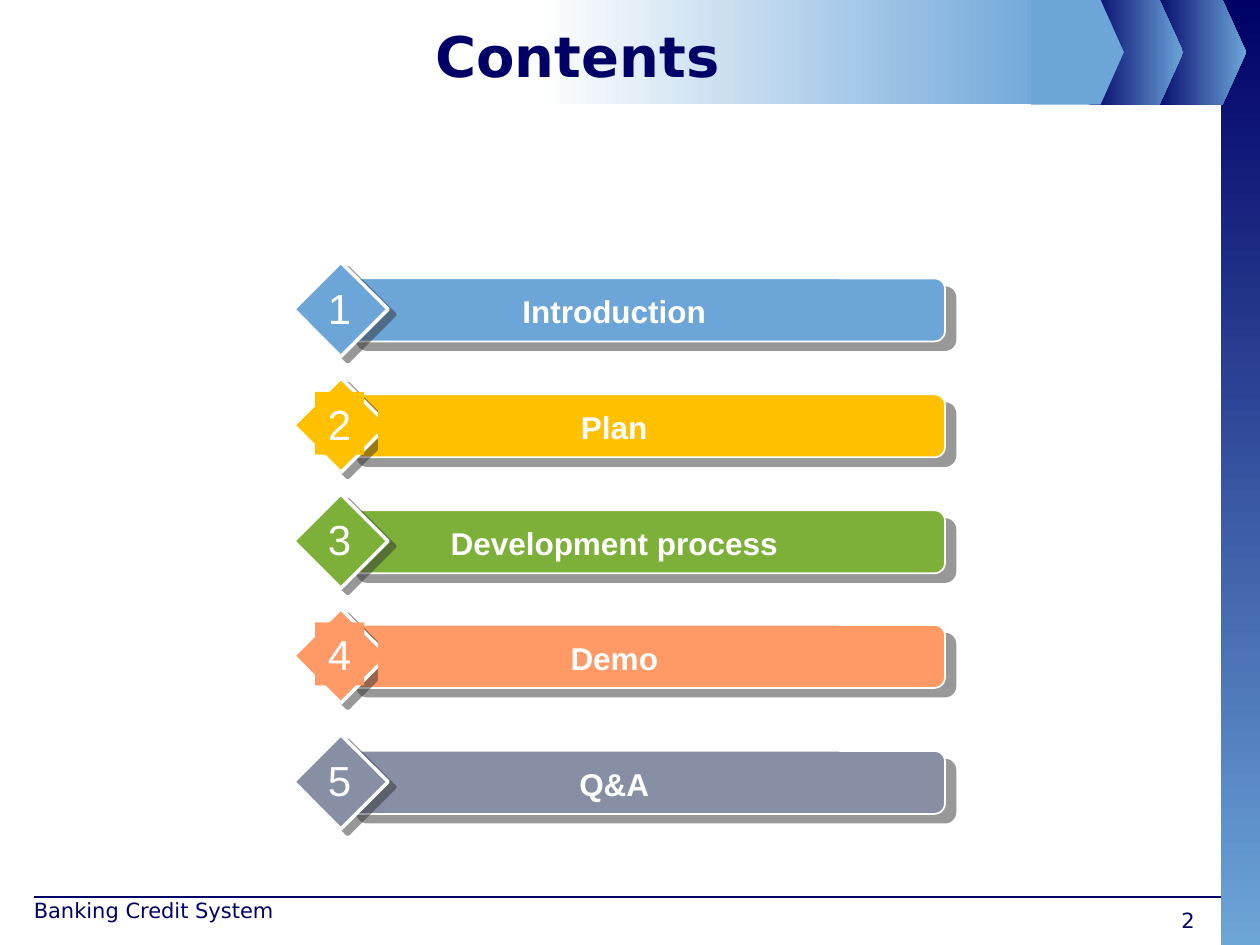
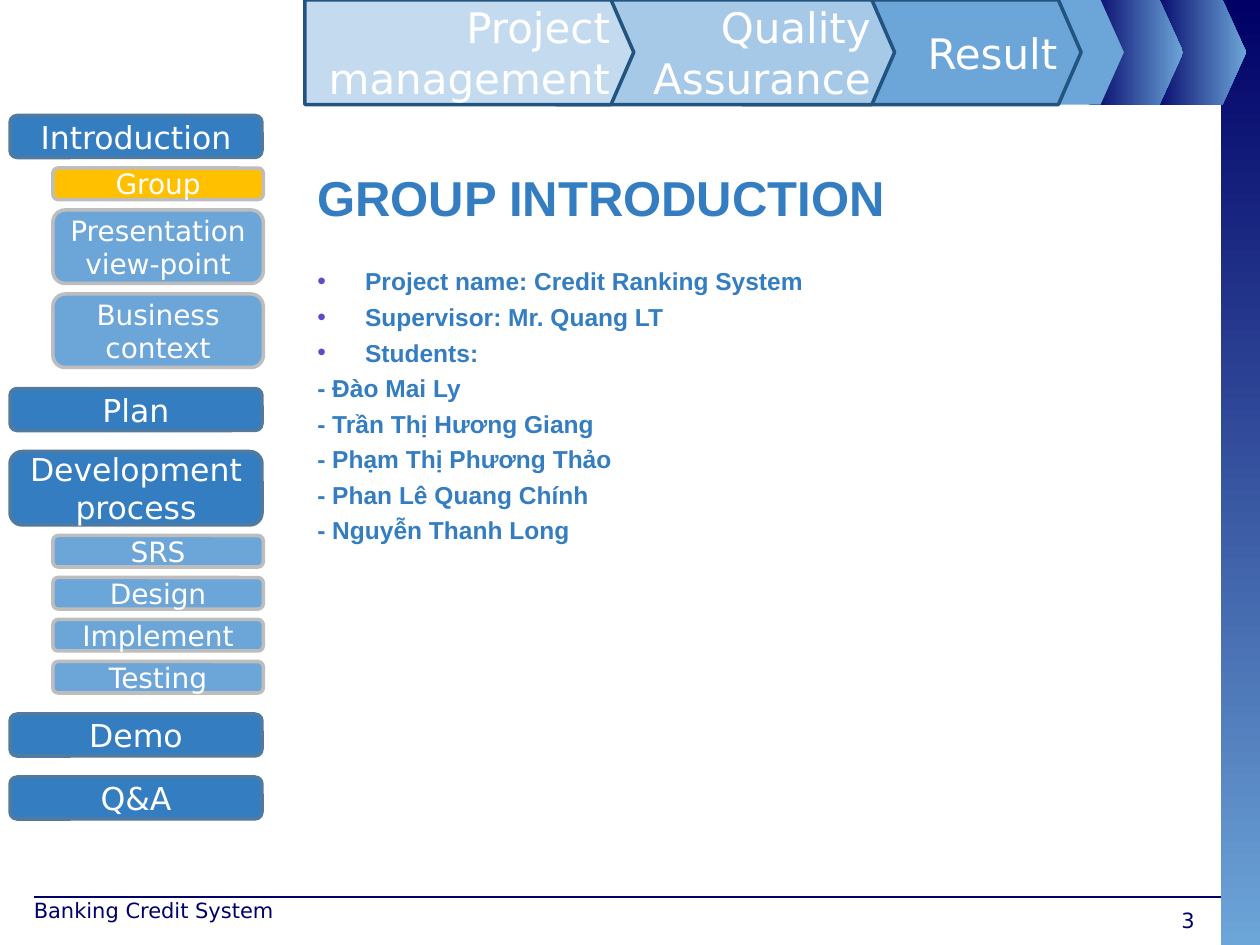
from lxml.etree import SubElement
from pptx import Presentation
from pptx.dml.color import RGBColor
from pptx.enum.shapes import MSO_CONNECTOR, MSO_SHAPE as Preset
from pptx.enum.text import MSO_ANCHOR as Anchor, PP_ALIGN as Align
from pptx.oxml.ns import qn
from pptx.util import Inches, Pt

COLORS = {
    "navy": "000066", "sky": "6CA5D8", "white": "FFFFFF", "gold": "FFC000",
    "green": "7DB038", "coral": "FF9966", "slate": "878FA5", "blue": "337DC0",
    "steel": "507AA0", "silver": "BDBDBD", "ink": "225480", "light": "A7C9E8",
    "pale": "C4DBEF", "violet": "5D4BC7", "shadow": "333333",
}
RGB = {name: RGBColor.from_string(value) for name, value in COLORS.items()}
SANS, ARIAL = "DejaVu Sans", "Arial"


def add_box(slide, preset, place, fill, line=None, line_width=1, adjustment=None,
            angle=0, shadow_distance=None, shadow_angle=0):
    shape = slide.shapes.add_shape(preset, *[Inches(value) for value in place])
    shape.shadow.inherit = False
    if adjustment is not None:
        shape.adjustments[0] = adjustment
    if isinstance(fill, tuple):
        shape.fill.gradient()
        shape.fill.gradient_angle = angle
        for stop, name in zip(shape.fill.gradient_stops, fill):
            stop.color.rgb = RGB[name]
    else:
        shape.fill.solid()
        shape.fill.fore_color.rgb = RGB[fill]
    if line:
        shape.line.color.rgb = RGB[line]
        shape.line.width = Pt(line_width)
    else:
        shape.line.fill.background()
    if shadow_distance:
        effects = shape._element.spPr.find(qn("a:effectLst"))
        outer = SubElement(effects, qn("a:outerShdw"), blurRad="0",
                           dist=str(Pt(shadow_distance)), dir=str(shadow_angle * 60000),
                           algn="ctr", rotWithShape="0")
        color = SubElement(outer, qn("a:srgbClr"), val=COLORS["shadow"])
        SubElement(color, qn("a:alpha"), val="50000")
    return shape


def write(target, text, place=None, size=18, font=SANS, color="white", bold=False,
          align=Align.CENTER, anchor=Anchor.MIDDLE, wrap=True, fill=None,
          before=0, bullet=None, hanging=0, add=False):
    if place:
        target = target.shapes.add_textbox(*[Inches(value) for value in place])
    frame = target.text_frame
    frame.word_wrap = wrap
    frame.vertical_anchor = anchor
    if fill:
        target.fill.solid()
        target.fill.fore_color.rgb = RGB[fill]
    paragraph = frame.add_paragraph() if add else frame.paragraphs[0]
    paragraph.alignment = align
    paragraph.space_before = Pt(before)
    properties = paragraph._p.get_or_add_pPr()
    if hanging:
        properties.set("marL", str(Inches(hanging)))
        properties.set("indent", str(-Inches(hanging)))
    if bullet:
        bullet_color = SubElement(properties, qn("a:buClr"))
        SubElement(bullet_color, qn("a:srgbClr"), val=COLORS["violet"])
        SubElement(properties, qn("a:buFont"), typeface=ARIAL)
        SubElement(properties, qn("a:buChar"), char=bullet)
    run = paragraph.add_run()
    run.text = text
    run.font.size = Pt(size)
    run.font.name = font
    run.font.bold = bold
    run.font.color.rgb = RGB[color]
    return target


presentation = Presentation()
presentation.slide_width = Inches(10)
presentation.slide_height = Inches(7.5)

for page_number in (2, 3):
    slide = presentation.slides.add_slide(presentation.slide_layouts[6])
    rule = slide.shapes.add_connector(MSO_CONNECTOR.STRAIGHT, Inches(0.27), Inches(7.12),
                                      Inches(9.69), Inches(7.12))
    rule.line.color.rgb = RGB["navy"]
    rule.line.width = Pt(0.75)
    SubElement(rule._element.spPr, qn("a:effectLst"))
    add_box(slide, Preset.RECTANGLE, (9.69, 0, 0.31, 7.5), ("navy", "sky"), angle=270)
    for left in (9.14, 8.64):
        add_box(slide, Preset.PENTAGON, (left, 0, 0.75, 0.83), ("navy", "sky"), adjustment=0.25)
    add_box(slide, Preset.RECTANGLE, (4.25, 0, 4.18, 0.83), ("white", "sky"))
    add_box(slide, Preset.PENTAGON, (8.18, 0, 0.74, 0.83), "sky", adjustment=0.25)
    write(slide, "Banking Credit System", (0.17, 7.07, 2.33, 0.35), size=12, color="navy",
          align=Align.LEFT, anchor=Anchor.TOP)
    write(slide, str(page_number), (7.25, 7.15, 2.33, 0.26), size=12, color="navy",
          align=Align.RIGHT, anchor=Anchor.TOP)

contents_slide, group_slide = presentation.slides

write(contents_slide, "Contents", (0.5, 0.13, 8.17, 0.62), size=32, color="navy", bold=True)
contents = [
    ("Introduction", "sky", 2.21, None),
    ("Plan", "gold", 3.13, "gold"),
    ("Development process", "green", 4.05, None),
    ("Demo", "coral", 4.96, "coral"),
    ("Q&A", "slate", 5.96, None),
]
for number, (label, color, top, label_fill) in enumerate(contents, 1):
    add_box(contents_slide, Preset.ROUNDED_RECTANGLE, (2.75, top, 4.75, 0.5), color, "white",
            shadow_distance=7.8, shadow_angle=40)
    add_box(contents_slide, Preset.DIAMOND, (2.33, top - 0.13, 0.75, 0.75), color, "white", 2,
            shadow_distance=5, shadow_angle=37)
    write(contents_slide, label, (3, top + 0.06, 3.75, 0.4), font=ARIAL, bold=True,
          anchor=Anchor.TOP, fill=label_fill)
    write(contents_slide, str(number), (2.5, top - 0.02, 0.39, 0.5), size=24, font=ARIAL,
          anchor=Anchor.TOP, wrap=False, fill=label_fill)

introduction = write(group_slide, "GROUP INTRODUCTION", (2.42, 1.28, 7.17, 0.83), size=28,
                     font=ARIAL, color="blue", bold=True, align=Align.LEFT, anchor=Anchor.TOP)
details = [
    ("Project name: Credit Ranking System", "•"),
    ("Supervisor: Mr. Quang LT", "•"),
    ("Students:", "•"),
    ("- Đào Mai Ly", None),
    ("- Trần Thị Hương Giang", None),
    ("- Phạm Thị Phương Thảo", None),
    ("- Phan Lê Quang Chính", None),
    ("- Nguyễn Thanh Long", None),
]
for index, (detail, bullet) in enumerate(details):
    write(introduction, detail, size=14, font=ARIAL, color="blue", bold=True, align=Align.LEFT,
          anchor=Anchor.TOP, before=3.5 if index else 23, bullet=bullet, hanging=0.38, add=True)

menu = [
    ("Introduction", "section", 1), ("Group", "current", 1),
    ("Presentation view-point", "topic", 2), ("Business context", "topic", 2),
    ("Plan", "section", 1), ("Development process", "section", 2),
    ("SRS", "topic", 1), ("Design", "topic", 1), ("Implement", "topic", 1),
    ("Testing", "topic", 1), ("Demo", "section", 1), ("Q&A", "section", 1),
]
menu_styles = {
    "section": (0.08, 2, "blue", "steel", 18, 4, 2),
    "topic": (0.42, 1.67, "sky", "silver", 16, 3, 1),
    "current": (0.42, 1.67, "gold", "silver", 16, 3, 1),
}
UNIT = 1 / 12
bottom = 9 * UNIT
for label, style, line_count in menu:
    left, width, fill, line, size, single_height, gap = menu_styles[style]
    top = bottom + gap * UNIT
    height = (single_height if line_count == 1 else 7) * UNIT
    button = add_box(group_slide, Preset.ROUNDED_RECTANGLE, (left, top, width, height),
                     fill, line, 2)
    write(button, label, size=size)
    bottom = top + height

stages = [
    ("Result", 5.89, 2.69, "sky"),
    ("Quality Assurance", 4.41, 2.69, "light"),
    ("Project management", 2.42, 2.61, "pale"),
]
for label, left, width, fill in stages:
    stage = add_box(group_slide, Preset.PENTAGON, (left, 0, width, 0.83), fill, "ink", 2,
                    adjustment=0.217)
    write(stage, label, size=24, align=Align.RIGHT)

presentation.save("out.pptx")
